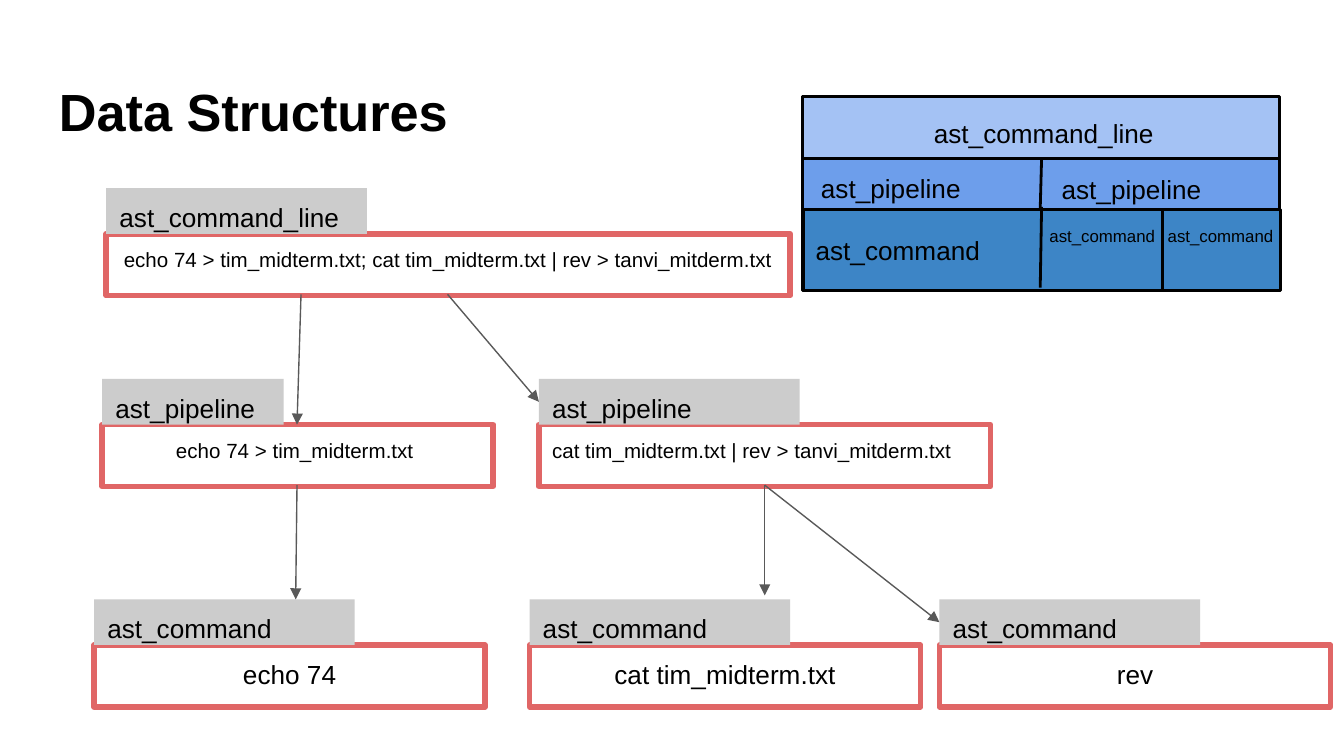
from typing import NamedTuple

from lxml import etree
from pptx import Presentation
from pptx.dml.color import RGBColor
from pptx.enum import shapes, text
from pptx.oxml.ns import qn
from pptx.util import Inches, Pt

BLACK = RGBColor(0x00, 0x00, 0x00)
GRAY = RGBColor(0xCC, 0xCC, 0xCC)
ARROW_GRAY = RGBColor(0x59, 0x59, 0x59)
RED = RGBColor(0xE0, 0x66, 0x66)
LIGHT_BLUE = RGBColor(0xA4, 0xC2, 0xF4)
MID_BLUE = RGBColor(0x6D, 0x9E, 0xEB)
DARK_BLUE = RGBColor(0x3D, 0x85, 0xC6)

LEFT, CENTER = text.PP_ALIGN.LEFT, text.PP_ALIGN.CENTER
LABEL_H, BOX_H = 0.34, 0.46


class Box(NamedTuple):
    x: float
    y: float
    w: float
    h: float


class Node(NamedTuple):
    """A syntax tree node: a gray type label on top of a red-framed command."""
    x: float
    y: float
    w: float
    kind: str
    command: str
    size: int = 14
    align: text.PP_ALIGN = CENTER
    label_w: float = 1.94


class Label(NamedTuple):
    box: Box
    words: str
    size: int = 14
    bold: bool = False


class Line(NamedTuple):
    x1: float
    y1: float
    x2: float
    y2: float


LAYERS = [
    (Box(5.97, 0.72, 3.55, 1.44), LIGHT_BLUE),
    (Box(5.97, 1.18, 3.55, 0.97), MID_BLUE),
    (Box(5.98, 1.56, 3.55, 0.6), DARK_BLUE),
]
NODES = [
    Node(0.79, 1.4, 5.09, "ast_command_line",
         "echo 74 > tim_midterm.txt; cat tim_midterm.txt | rev > tanvi_mitderm.txt", 11),
    Node(0.76, 2.82, 2.91, "ast_pipeline", "echo 74 > tim_midterm.txt ", 11, label_w=1.35),
    Node(4.01, 2.82, 3.36, "ast_pipeline",
         "cat tim_midterm.txt | rev > tanvi_mitderm.txt", 11, LEFT),
    Node(0.7, 4.46, 2.91, "ast_command", "echo 74"),
    Node(3.94, 4.46, 2.91, "ast_command", "cat tim_midterm.txt"),
    Node(6.99, 4.46, 2.91, "ast_command", "rev"),
]
ARROWS = [
    Line(2.24, 2.19, 2.21, 3.16),
    Line(3.33, 2.19, 4.01, 2.99),
    Line(2.21, 3.61, 2.2, 4.46),
    Line(5.69, 3.61, 5.69, 4.43),
    Line(5.69, 3.61, 6.99, 4.63),
]
DIVIDERS = [
    Line(7.75, 1.18, 7.74, 1.55),
    Line(7.75, 1.54, 7.74, 2.14),
    Line(8.65, 1.57, 8.65, 2.15),
]
LABELS = [
    Label(Box(0.34, 0.49, 9.32, 0.63), "Data Structures", 28, True),
    Label(Box(6.85, 0.77, 2.1, 0.27), "ast_command_line"),
    Label(Box(6.01, 1.18, 1.29, 0.31), "ast_pipeline"),
    Label(Box(5.97, 1.64, 1.55, 0.39), "ast_command"),
    Label(Box(7.8, 1.19, 1.29, 0.31), "ast_pipeline"),
    Label(Box(7.71, 1.6, 1.61, 0.39), "ast_command", 9),
    Label(Box(8.59, 1.6, 1.61, 0.39), "ast_command", 9),
]


def write(sp, words: str, size: int, align=LEFT, bold: bool = False) -> None:
    tf = sp.text_frame
    tf.word_wrap = True
    tf.vertical_anchor = text.MSO_ANCHOR.TOP
    tf.margin_left = tf.margin_right = tf.margin_top = tf.margin_bottom = Inches(0.1)
    p = tf.paragraphs[0]
    p.alignment = align
    r = p.add_run()
    r.text = words
    r.font.name = "Arial"
    r.font.size = Pt(size)
    r.font.bold = bold
    r.font.color.rgb = BLACK


def add_rect(s, box: Box, fill=None, line=None, width: float = 1.5):
    sp = s.shapes.add_shape(shapes.MSO_SHAPE.RECTANGLE, *map(Inches, box))
    sp.shadow.inherit = False
    if fill is None:
        sp.fill.background()
    else:
        sp.fill.solid()
        sp.fill.fore_color.rgb = fill
    if line is None:
        sp.line.fill.background()
    else:
        sp.line.color.rgb = line
        sp.line.width = Pt(width)
    return sp


def add_node(s, node: Node) -> None:
    frame = add_rect(s, Box(node.x, node.y + LABEL_H, node.w, BOX_H), line=RED, width=3)
    write(frame, node.command, node.size, node.align)
    tab = add_rect(s, Box(node.x, node.y, node.label_w, LABEL_H), fill=GRAY)
    write(tab, node.kind, 14)


def add_line(s, line: Line, color: RGBColor, width: float, arrow: bool = False) -> None:
    c = s.shapes.add_connector(shapes.MSO_CONNECTOR.STRAIGHT, *map(Inches, line))
    c.line.color.rgb = color
    c.line.width = Pt(width)
    sp_pr = c._element.spPr
    if arrow:
        etree.SubElement(sp_pr.find(qn("a:ln")), qn("a:tailEnd"), type="triangle")
    etree.SubElement(sp_pr, qn("a:effectLst"))


def add_label(s, label: Label) -> None:
    sp = s.shapes.add_textbox(*map(Inches, label.box))
    write(sp, label.words, label.size, bold=label.bold)


def main() -> None:
    prs = Presentation()
    prs.slide_width = Inches(10)
    prs.slide_height = prs.slide_width * 9 // 16
    s = prs.slides.add_slide(prs.slide_layouts[6])
    for box, fill in LAYERS:
        add_rect(s, box, fill, BLACK)
    for node in NODES:
        add_node(s, node)
    for arrow in ARROWS:
        add_line(s, arrow, ARROW_GRAY, 0.75, arrow=True)
    for divider in DIVIDERS:
        add_line(s, divider, BLACK, 1.5)
    for label in LABELS:
        add_label(s, label)
    prs.save("out.pptx")


if __name__ == "__main__":
    main()
